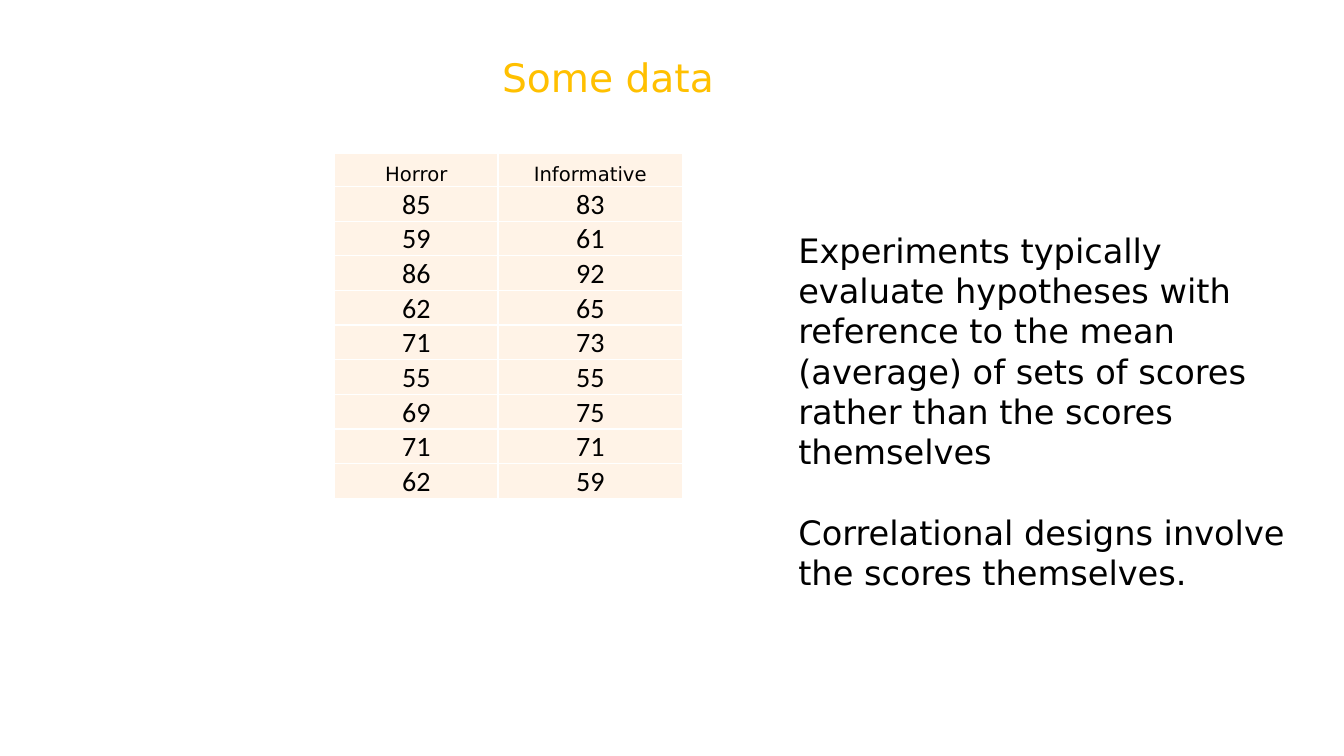
from dataclasses import dataclass

from lxml.etree import SubElement
from pptx import Presentation
from pptx.dml.color import RGBColor
from pptx.enum.text import MSO_ANCHOR, MSO_AUTO_SIZE, PP_ALIGN
from pptx.oxml.ns import qn
from pptx.slide import Slide
from pptx.table import _Cell
from pptx.text.text import TextFrame
from pptx.util import Inches, Pt

COLORS = {"title": "FFC000", "text": "000000", "cell": "FFF3E7", "border": "FFFFFF"}
HEADING_FONT = "DejaVu Sans"
SCORE_FONT = "Calibri"


@dataclass(frozen=True)
class ScoreColumn:
    heading: str
    width: float
    scores: tuple[int, ...]


SCORE_COLUMNS = (
    ScoreColumn("Horror", 1.62, (85, 59, 86, 62, 71, 55, 69, 71, 62)),
    ScoreColumn("Informative", 1.83, (83, 61, 92, 65, 73, 55, 75, 71, 59)),
)
REMARKS = (
    "Experiments typically evaluate hypotheses with reference to the mean "
    "(average) of sets of scores rather than the scores themselves",
    "Correlational designs involve the scores themselves.",
)


def write_text(frame: TextFrame, *paragraphs: str, size: float, color: str = "text",
               font: str = HEADING_FONT, align: PP_ALIGN = PP_ALIGN.LEFT,
               gap: float = 0) -> None:
    for index, wording in enumerate(paragraphs):
        paragraph = frame.add_paragraph() if index else frame.paragraphs[0]
        paragraph.alignment = align
        if index:
            paragraph.space_before = Pt(gap)
        run = paragraph.add_run()
        run.text = wording
        run.font.size = Pt(size)
        run.font.name = font
        run.font.color.rgb = RGBColor.from_string(COLORS[color])


def add_borders(cell: _Cell) -> None:
    properties = cell._tc.get_or_add_tcPr()
    for position, side in enumerate(("a:lnL", "a:lnR", "a:lnT", "a:lnB")):
        border = properties.makeelement(qn(side), {"w": str(Pt(1))})
        fill = SubElement(border, qn("a:solidFill"))
        SubElement(fill, qn("a:srgbClr"), {"val": COLORS["border"]})
        properties.insert(position, border)


def format_cell(cell: _Cell, wording: str, size: float, font: str, inset: float) -> None:
    cell.fill.solid()
    cell.fill.fore_color.rgb = RGBColor.from_string(COLORS["cell"])
    cell.vertical_anchor = MSO_ANCHOR.BOTTOM
    cell.margin_left = cell.margin_right = cell.margin_top = Inches(inset)
    cell.margin_bottom = 0
    add_borders(cell)
    write_text(cell.text_frame, wording, size=size, font=font, align=PP_ALIGN.CENTER)


def add_title(slide: Slide) -> None:
    title = slide.shapes.title
    title.left, title.top = Inches(4.88), Inches(0.48)
    title.width, title.height = Inches(2.34), Inches(0.57)
    title.text_frame.word_wrap = False
    title.text_frame.auto_size = MSO_AUTO_SIZE.SHAPE_TO_FIT_TEXT
    title.text_frame.vertical_anchor = MSO_ANCHOR.TOP
    write_text(title.text_frame, "Some data", size=28, color="title")


def add_remarks(slide: Slide) -> None:
    remarks = slide.shapes.add_textbox(Inches(7.82), Inches(2.23), Inches(5.13), Inches(4.04))
    remarks.text_frame.word_wrap = True
    remarks.text_frame.auto_size = MSO_AUTO_SIZE.SHAPE_TO_FIT_TEXT
    write_text(remarks.text_frame, *REMARKS, size=24, gap=28.8)


def add_scores(slide: Slide) -> None:
    row_count = 1 + len(SCORE_COLUMNS[0].scores)
    table_width = sum(column.width for column in SCORE_COLUMNS)
    score_frame = slide.shapes.add_table(row_count, len(SCORE_COLUMNS), Inches(3.32),
                                         Inches(1.52), Inches(table_width), Inches(3.42))
    score_table = score_frame.table
    for index, row in enumerate(score_table.rows):
        row.height = Inches(0.27 if index else 0.33)
    for column_index, column in enumerate(SCORE_COLUMNS):
        score_table.columns[column_index].width = Inches(column.width)
        format_cell(score_table.cell(0, column_index), column.heading, 14, HEADING_FONT, 0)
        for row_index, score in enumerate(column.scores, start=1):
            format_cell(score_table.cell(row_index, column_index), str(score),
                        20, SCORE_FONT, 0.01)
    score_frame.height = Inches(3.42)


def main() -> None:
    presentation = Presentation()
    presentation.slide_width = Inches(13.33)
    presentation.slide_height = Inches(7.5)
    slide = presentation.slides.add_slide(presentation.slide_layouts.get_by_name("Title Only"))
    add_title(slide)
    add_remarks(slide)
    add_scores(slide)
    presentation.save("out.pptx")


if __name__ == "__main__":
    main()
